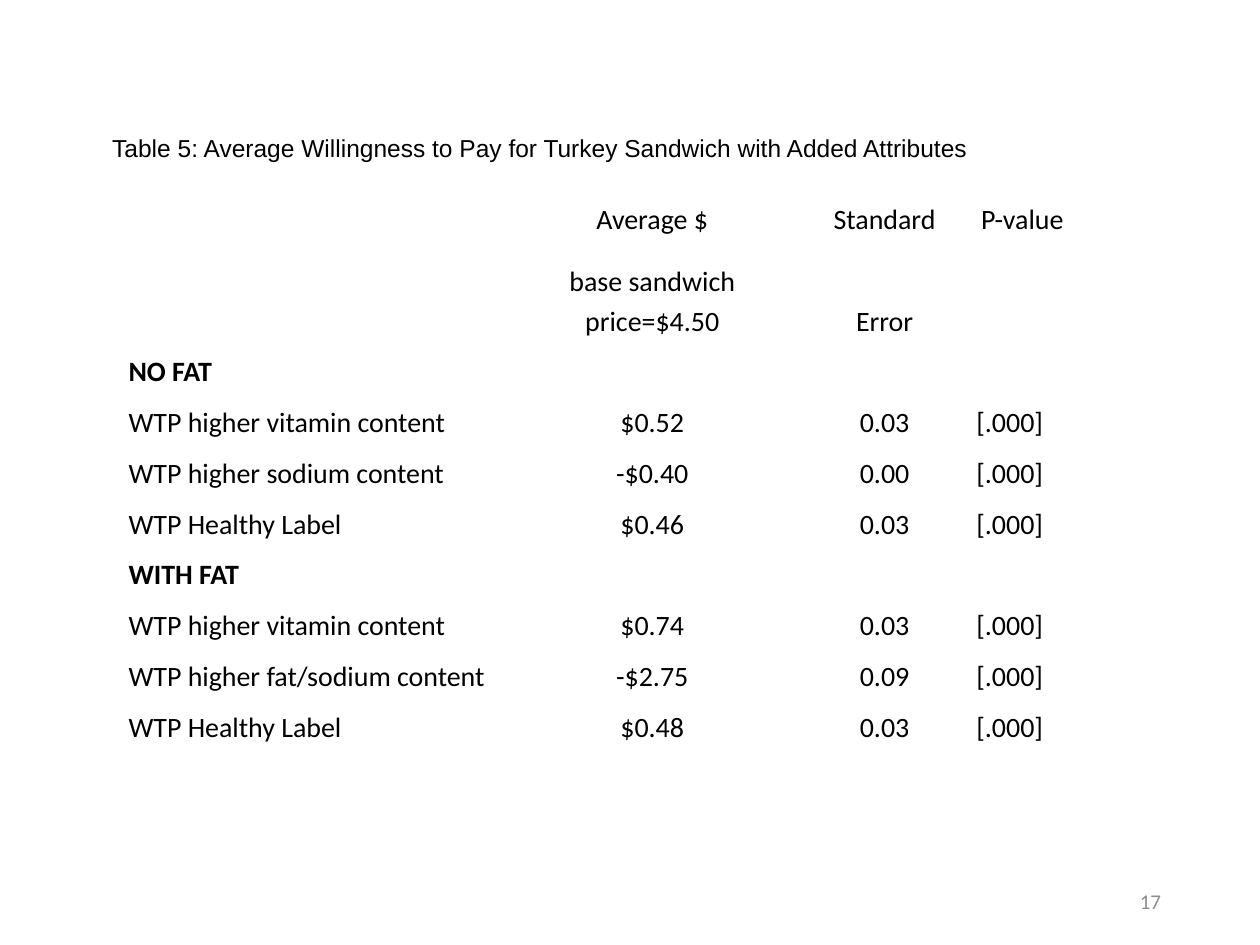
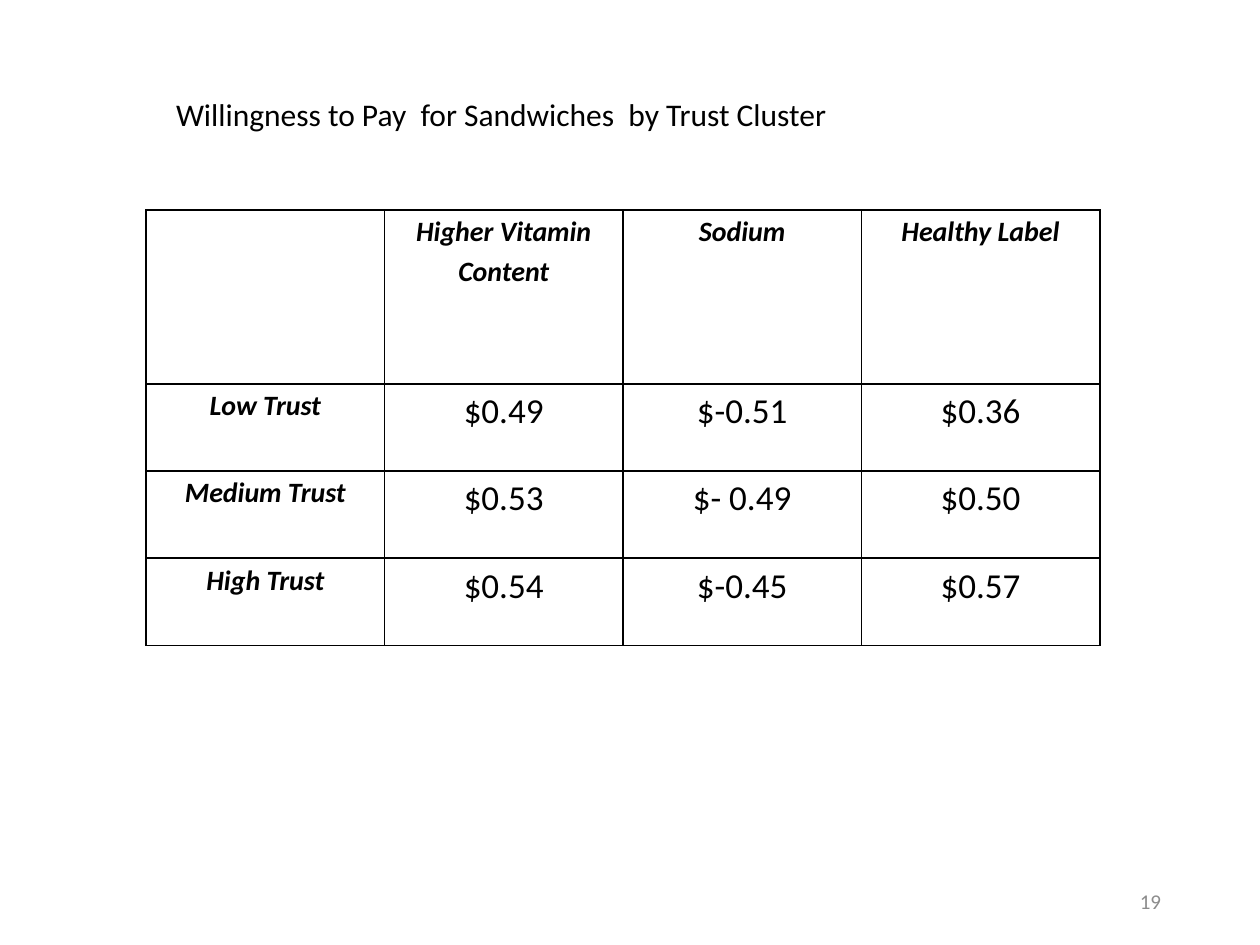
from lxml.etree import SubElement
from pptx import Presentation
from pptx.dml.color import RGBColor
from pptx.enum.text import MSO_ANCHOR, PP_ALIGN
from pptx.oxml.ns import qn
from pptx.util import Pt

COLORS = {"text": "000000", "page": "8C8C8C", "rule": "000000"}
BODY = {"name": "Calibri", "size": Pt(16)}
HEADING = BODY | {"bold": True}
LABEL = HEADING | {"italic": True}
AMOUNT = BODY | {"size": Pt(20)}
CELL = {"margin_left": Pt(5), "margin_right": Pt(5),
        "margin_top": 0, "margin_bottom": 0}


def apply(target, formats):
    for attribute, value in formats.items():
        setattr(target, attribute, value)


class Deck:
    def __init__(self):
        self.prs = Presentation()
        apply(self.prs, {"slide_width": Pt(720), "slide_height": Pt(540)})
        self.slide = None

    def new_slide(self, page):
        self.slide = self.prs.slides.add_slide(self.prs.slide_layouts[6])
        self.text(page, (508.5, 500.5, 162, 28.75), BODY | {"size": Pt(12)},
                  "page", PP_ALIGN.RIGHT, MSO_ANCHOR.MIDDLE)

    def add_words(self, paragraph, words, font, color="text",
                  align=PP_ALIGN.LEFT):
        paragraph.alignment = align
        run = paragraph.add_run()
        run.text = words
        apply(run.font, font)
        run.font.color.rgb = RGBColor.from_string(COLORS[color])

    def text(self, words, box, font, color="text", align=PP_ALIGN.LEFT,
             anchor=MSO_ANCHOR.TOP, wrap=True):
        frame = self.slide.shapes.add_textbox(*map(Pt, box)).text_frame
        apply(frame, {"word_wrap": wrap, "vertical_anchor": anchor})
        self.add_words(frame.paragraphs[0], words, font, color, align)

    def table(self, rows, corner, widths, heights, style, anchor, ruled=False):
        """style(row, column, words) gives the font and alignment of a cell."""
        size = sum(widths), sum(heights)
        grid = self.slide.shapes.add_table(
            len(rows), len(widths), *map(Pt, corner + size)).table
        apply(grid, {"first_row": False, "horz_banding": False})
        for column, width in zip(grid.columns, widths):
            column.width = Pt(width)
        for r, (row, height) in enumerate(zip(rows, heights)):
            grid.rows[r].height = Pt(height)
            for c, words in enumerate(row):
                cell = grid.cell(r, c)
                apply(cell, CELL | {"vertical_anchor": anchor})
                if ruled:
                    self.rule(cell)
                cell.fill.background()
                if words:
                    font, align = style(r, c, words)
                    paragraph = cell.text_frame.paragraphs[0]
                    paragraph.line_spacing = 1.15
                    self.add_words(paragraph, words, font, align=align)

    def rule(self, cell):
        # Borders come before the fill in the cell properties
        properties = cell._tc.get_or_add_tcPr()
        for side in ("lnL", "lnR", "lnT", "lnB"):
            line = SubElement(properties, qn(f"a:{side}"), w=str(int(Pt(1))))
            fill = SubElement(line, qn("a:solidFill"))
            SubElement(fill, qn("a:srgbClr"), val=COLORS["rule"])


def attribute_style(row, column, words):
    centred = column in (1, 2) or row == 0
    return (HEADING if words.isupper() and column == 0 else BODY,
            PP_ALIGN.CENTER if centred else PP_ALIGN.LEFT)


def trust_style(row, column, words):
    return LABEL if row == 0 or column == 0 else AMOUNT, PP_ALIGN.CENTER


def main():
    deck = Deck()

    # Willingness to pay by attribute
    deck.new_slide("17")
    blank = ("",) * 4
    significance = "[.000]"
    attributes = [
        ("", "Average $", "Standard", "P-value"),
        ("", "base sandwich price=$4.50", "Error", ""),
        ("NO FAT", "", "", ""),
        ("WTP higher vitamin content", "$0.52", "0.03", significance),
        ("WTP higher sodium content", "-$0.40", "0.00", significance),
        ("WTP Healthy Label", "$0.46", "0.03", significance),
        ("WITH FAT", "", "", ""),
        ("WTP higher vitamin content", "$0.74", "0.03", significance),
        ("WTP higher fat/sodium content", "-$2.75", "0.09", significance),
        ("WTP Healthy Label", "$0.48", "0.03", significance),
        blank,
    ]
    deck.table(attributes, (68.5, 106.5), (219, 170.5, 95, 62.5),
               [29, 58] + [29] * 9, attribute_style, MSO_ANCHOR.BOTTOM)
    deck.text("Table 5: Average Willingness to Pay for Turkey Sandwich "
              "with Added Attributes", (57, 72, 505.5, 24.5),
              {"name": "Arial", "size": Pt(14)},
              anchor=MSO_ANCHOR.MIDDLE, wrap=False)

    # Willingness to pay by trust cluster
    deck.new_slide("19")
    clusters = [
        ("", "Higher Vitamin Content", "Sodium", "Healthy Label"),
        ("Low Trust", "$0.49", "$-0.51", "$0.36"),
        ("Medium Trust", "$0.53", "$- 0.49", "$0.50"),
        ("High Trust", "$0.54", "$-0.45", "$0.57"),
    ]
    deck.table(clusters, (83.5, 120), (136.25,) * 4, [99.5] + [49.75] * 3,
               trust_style, MSO_ANCHOR.TOP, ruled=True)
    deck.text("Willingness to Pay  for Sandwiches  by Trust Cluster",
              (93.5, 51, 508.5, 31.5), BODY | {"size": Pt(18)})

    deck.prs.save("out.pptx")


if __name__ == "__main__":
    main()
